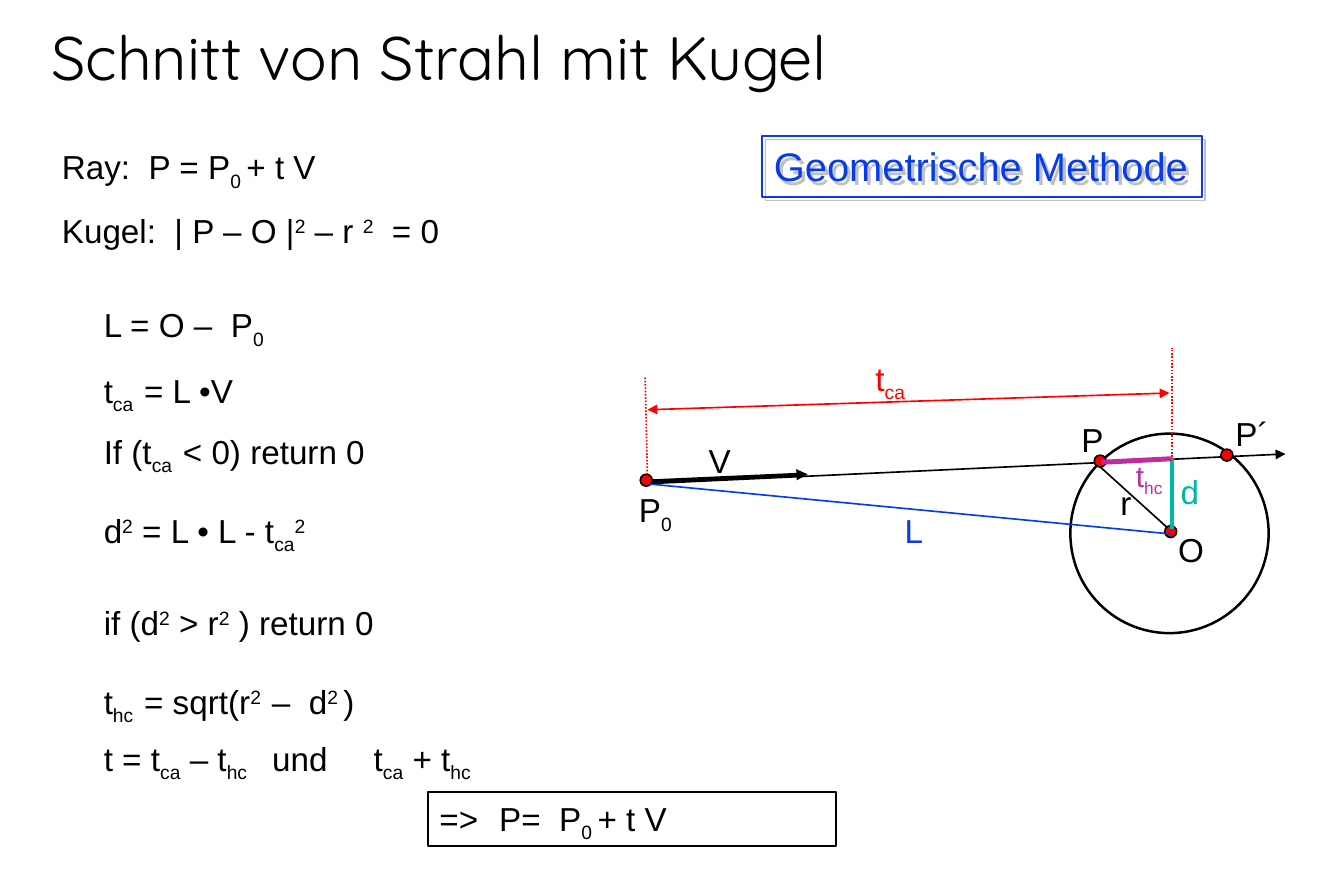
"""Build the slide on the geometric method of ray and sphere intersection."""
from dataclasses import dataclass

from lxml import etree
from pptx import Presentation
from pptx.dml.color import RGBColor
from pptx.enum.dml import MSO_LINE
from pptx.enum.shapes import MSO_CONNECTOR, MSO_SHAPE
from pptx.enum.text import MSO_ANCHOR, PP_ALIGN
from pptx.oxml.ns import qn
from pptx.util import Pt

PX = 9144
STRAIGHT = MSO_CONNECTOR.STRAIGHT
OVAL = MSO_SHAPE.OVAL
RECTANGLE = MSO_SHAPE.RECTANGLE
DOTTED = MSO_LINE.ROUND_DOT
LEFT, CENTER = PP_ALIGN.LEFT, PP_ALIGN.CENTER
TOP, BOTTOM = MSO_ANCHOR.TOP, MSO_ANCHOR.BOTTOM
BASELINES = {"_": "-25000", "^": "30000"}
COLORS = {
    "black": "000000",
    "blue": "063DE8",
    "red": "FF0000",
    "teal": "00B7A5",
    "violet": "BB2DA0",
    "shadow": "C0C0C0",
}


@dataclass(frozen=True)
class Formula:
    text: str
    left: int
    top: int
    width: int
    height: int = 43
    line_spacing: float = 1.0
    space_before: int = 0
    tabs: tuple[int, ...] = ()


@dataclass(frozen=True)
class Label:
    text: str
    left: int
    top: int
    width: int
    color: str = "black"
    size: int = 20
    align: PP_ALIGN = CENTER


@dataclass(frozen=True)
class Line:
    start: tuple[int, int]
    end: tuple[int, int]
    color: str = "black"
    weight: float = 1
    arrows: tuple[str, ...] = ()
    dotted: bool = False


FORMULAS = (
    Formula("Ray:  P = P{_0 }+ t V", 42, 118, 234),
    Formula("Kugel:  | P – O |{^2} – r {^2}  = 0", 42, 171, 337),
    Formula("L = O –  P{_0}", 77, 250, 199),
    Formula("t{_ca  }= L •V", 77, 305, 199),
    Formula("If (t{_ca  }< 0) return 0", 77, 356, 318),
    Formula("d{^2} = L • L - t{_ca}{^2}\nif (d{^2} > r{^2} ) return 0",
            77, 422, 318, 98, space_before=28),
    Formula("t{_hc  }= sqrt(r{^2  }–  d{^2 })\n"
            "t = t{_ca} – t{_hc}\tund\tt{_ca} + t{_hc}",
            77, 556, 378, 93, line_spacing=1.25, tabs=(141, 226)),
)
LABELS = (
    Label("P{_0}", 524, 405, 49),
    Label("P´", 1024, 341, 48),
    Label("P", 895, 346, 39),
    Label("V", 583, 364, 39),
    Label("r", 928, 399, 29),
    Label("O", 976, 438, 42),
    Label("L", 747, 422, 36, "blue"),
    Label("t{_ca}", 723, 295, 55, "red", align=LEFT),
    Label("d", 978, 390, 36, "teal"),
    Label("t{_hc}", 941, 378, 55, "violet", 18, LEFT),
)
RAY_LINES = (
    Line((540, 403), (676, 397), weight=2.25, arrows=("tailEnd",)),
    Line((539, 405), (1076, 380), arrows=("tailEnd",)),
    Line((920, 390), (983, 447)),
)
DISTANCE_LINES = (
    Line((542, 405), (980, 447), "blue"),
    Line((542, 343), (979, 329), "red", arrows=("headEnd", "tailEnd")),
    Line((981, 443), (981, 291), "red", dotted=True),
    Line((542, 400), (540, 315), "red", dotted=True),
    Line((981, 384), (981, 443), "teal", 2.25),
    Line((922, 387), (981, 384), "violet", 3),
)
POINTS = ((536, 397), (916, 381), (1022, 376), (975, 440))


def rgb(name: str) -> RGBColor:
    return RGBColor.from_string(COLORS[name])


def write_text(shape, text: str, *, size: int = 20, color: str = "black", font: str = "Arial",
               align: PP_ALIGN = LEFT, anchor: MSO_ANCHOR = TOP, wrap: bool = False,
               line_spacing: float = 1.0, space_before: int = 0,
               tabs: tuple[int, ...] = ()) -> None:
    frame = shape.text_frame
    frame.word_wrap = wrap
    frame.vertical_anchor = anchor
    for number, row in enumerate(text.split("\n")):
        paragraph = frame.add_paragraph() if number else frame.paragraphs[0]
        paragraph.alignment = align
        paragraph.line_spacing = line_spacing
        if number:
            paragraph.space_before = Pt(space_before)
        if tabs:
            properties = paragraph._p.get_or_add_pPr()
            tab_list = etree.SubElement(properties, qn("a:tabLst"))
            for position in tabs:
                etree.SubElement(tab_list, qn("a:tab"), pos=str(position * PX), algn="l")
        for index, piece in enumerate(row.replace("}", "{").split("{")):
            if not piece:
                continue
            run = paragraph.add_run()
            run.font.size = Pt(size)
            run.font.name = font
            run.font.color.rgb = rgb(color)
            shifted = index % 2 == 1
            run.text = piece[1:] if shifted else piece
            if shifted:
                run._r.get_or_add_rPr().set("baseline", BASELINES[piece[0]])


def add_text(slide, text: str, left: int, top: int, width: int, height: int = 43, **style) -> None:
    box = slide.shapes.add_textbox(left * PX, top * PX, width * PX, height * PX)
    write_text(box, text, **style)


def add_outline(slide, kind: MSO_SHAPE, left: int, top: int, width: int, height: int,
                color: str = "black", weight: float = 1, fill: str = ""):
    shape = slide.shapes.add_shape(kind, left * PX, top * PX, width * PX, height * PX)
    shape.shadow.inherit = False
    shape.line.color.rgb = rgb(color)
    shape.line.width = Pt(weight)
    if fill:
        shape.fill.solid()
        shape.fill.fore_color.rgb = rgb(fill)
    else:
        shape.fill.background()
    return shape


def add_line(slide, line: Line) -> None:
    ends = [value * PX for value in line.start + line.end]
    connector = slide.shapes.add_connector(STRAIGHT, *ends)
    connector.line.color.rgb = rgb(line.color)
    connector.line.width = Pt(line.weight)
    if line.dotted:
        connector.line.dash_style = DOTTED
    outline = connector.line._get_or_add_ln()
    for arrow in line.arrows:
        etree.SubElement(outline, qn(f"a:{arrow}"), type="triangle")
    etree.SubElement(connector._element.spPr, qn("a:effectLst"))


def add_shadow(shape) -> None:
    effects = shape._element.spPr.find(qn("a:effectLst"))
    shadow = etree.SubElement(effects, qn("a:outerShdw"), dist=str(Pt(2.8)), dir="2700000",
                              algn="ctr", rotWithShape="0")
    etree.SubElement(shadow, qn("a:srgbClr"), val=COLORS["shadow"])


def main() -> None:
    presentation = Presentation()
    presentation.slide_width = 1125 * PX
    presentation.slide_height = 750 * PX
    slide = presentation.slides.add_slide(presentation.slide_layouts[6])

    add_text(slide, "Schnitt von Strahl mit Kugel", 33, -7, 1017, 90, size=37,
             font="Quicksand", anchor=BOTTOM, wrap=True, line_spacing=1.04)
    for formula in FORMULAS:
        add_text(slide, formula.text, formula.left, formula.top, formula.width, formula.height,
                 line_spacing=formula.line_spacing, space_before=formula.space_before,
                 tabs=formula.tabs)

    method = add_outline(slide, RECTANGLE, 638, 114, 368, 51, "blue")
    add_shadow(method)
    write_text(method, "Geometrische Methode", size=24, color="blue")
    result = add_outline(slide, RECTANGLE, 358, 663, 342, 45)
    write_text(result, "=> \tP=  P{_0 }+ t V", wrap=True)

    for line in RAY_LINES:
        add_line(slide, line)
    add_outline(slide, OVAL, 896, 363, 166, 167, weight=1.5)
    for left, top in POINTS:
        add_outline(slide, OVAL, left, top, 10, 10, fill="red")
    for line in DISTANCE_LINES:
        add_line(slide, line)
    for label in LABELS:
        add_text(slide, label.text, label.left, label.top, label.width,
                 size=label.size, color=label.color, align=label.align)
    presentation.save("out.pptx")


if __name__ == "__main__":
    main()
